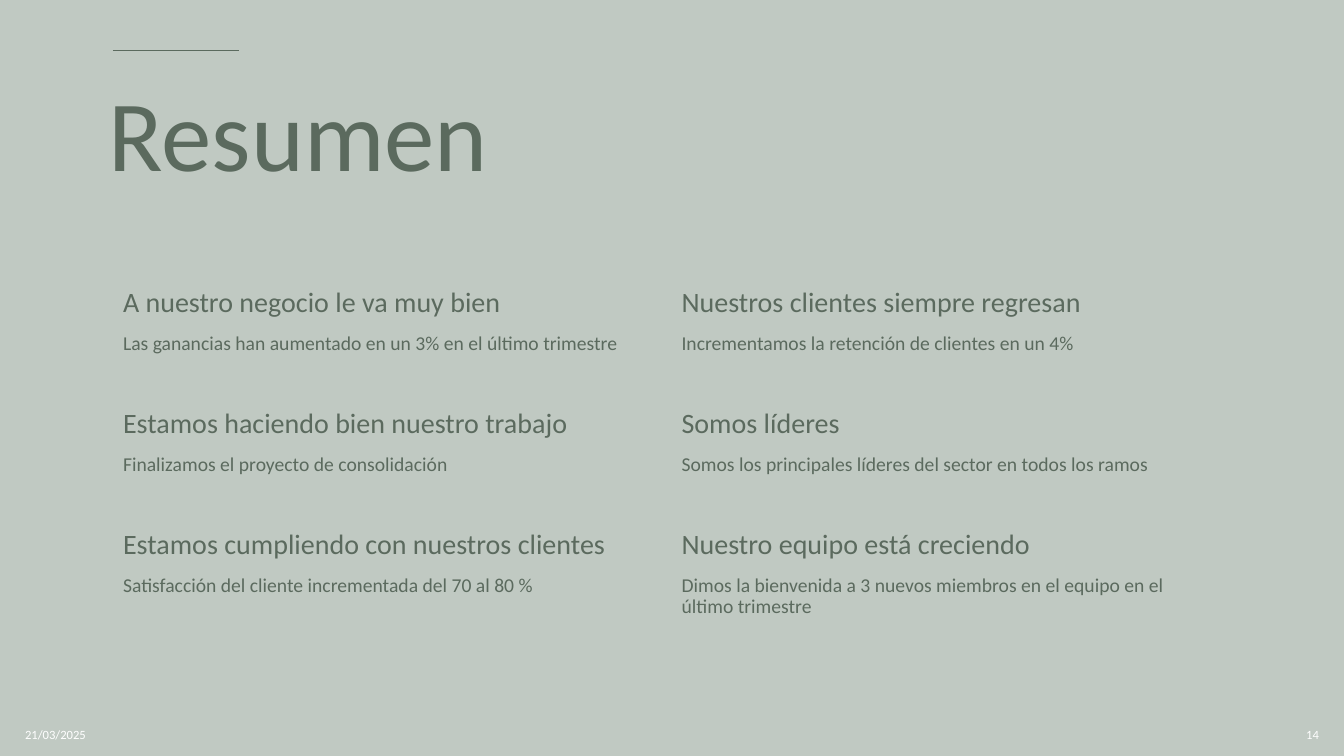
from pptx import Presentation
from pptx.dml.color import RGBColor
from pptx.enum.shapes import MSO_CONNECTOR
from pptx.enum.text import MSO_ANCHOR, PP_ALIGN
from pptx.oxml.ns import qn
from pptx.util import Inches, Pt
from lxml.etree import SubElement

SAGE = RGBColor(0xC0, 0xC9, 0xC2)
FOREST = RGBColor(0x5B, 0x6A, 0x5E)
WHITE = RGBColor(0xFF, 0xFF, 0xFF)
FONT = "Calibri"
NO_STYLE_NO_GRID = "{2D5ABB26-0587-4C30-8999-92F81FD0307C}"

SLIDE_WIDTH, SLIDE_HEIGHT = 13.33, 7.5
MARGIN = 1.12
COLUMN, ROW = 5.54, 1.2
SUMMARY_TOP = 2.81
FOOTER_TOP, FOOTER_WIDTH, FOOTER_HEIGHT, FOOTER_INSET = 7.09, 3, 0.4, 0.15

ACHIEVEMENTS = [
    [
        ("A nuestro negocio le va muy bien",
         "Las ganancias han aumentado en un 3% en el último trimestre"),
        ("Nuestros clientes siempre regresan",
         "Incrementamos la retención de clientes en un 4%"),
    ],
    [
        ("Estamos haciendo bien nuestro trabajo",
         "Finalizamos el proyecto de consolidación"),
        ("Somos líderes",
         "Somos los principales líderes del sector en todos los ramos"),
    ],
    [
        ("Estamos cumpliendo con nuestros clientes",
         "Satisfacción del cliente incrementada del 70 al 80 %"),
        ("Nuestro equipo está creciendo",
         "Dimos la bienvenida a 3 nuevos miembros en el equipo en el último trimestre"),
    ],
]


def style_paragraph(paragraph, size, color, line_spacing=1.0, space_before=0):
    paragraph.line_spacing = line_spacing
    paragraph.space_before = Pt(space_before)
    for run in paragraph.runs:
        run.font.name = FONT
        run.font.size = Pt(size)
        run.font.color.rgb = color


def add_label(slide, wording, box, size, color, align=PP_ALIGN.LEFT, line_spacing=1.0):
    label = slide.shapes.add_textbox(*map(Inches, box))
    frame = label.text_frame
    frame.word_wrap = True
    frame.vertical_anchor = MSO_ANCHOR.MIDDLE
    frame.text = wording
    frame.paragraphs[0].alignment = align
    style_paragraph(frame.paragraphs[0], size, color, line_spacing)


def add_accent_rule(slide, left, top, length):
    accent = slide.shapes.add_connector(
        MSO_CONNECTOR.STRAIGHT,
        Inches(left), Inches(top), Inches(left + length), Inches(top))
    accent.line.color.rgb = FOREST
    accent.line.width = Pt(1.25)
    SubElement(accent.element.spPr, qn("a:effectLst"))


def fill_achievement(cell, headline, detail):
    cell.fill.background()
    frame = cell.text_frame
    frame.text = headline
    frame.add_paragraph().text = detail
    for paragraph, size in zip(frame.paragraphs, (20, 14)):
        style_paragraph(paragraph, size, FOREST, line_spacing=0.9, space_before=10)


def add_summary_table(slide):
    row_count, column_count = len(ACHIEVEMENTS), len(ACHIEVEMENTS[0])
    holder = slide.shapes.add_table(
        row_count, column_count, Inches(MARGIN), Inches(SUMMARY_TOP),
        Inches(COLUMN * column_count), Inches(ROW * row_count))
    summary = holder.table
    summary.first_row = False
    summary.horz_banding = False
    next(holder.element.iter(qn("a:tableStyleId"))).text = NO_STYLE_NO_GRID
    for row_index, achievements in enumerate(ACHIEVEMENTS):
        for column_index, achievement in enumerate(achievements):
            fill_achievement(summary.cell(row_index, column_index), *achievement)


def add_footer(slide, wording, left, align):
    add_label(slide, wording, (left, FOOTER_TOP, FOOTER_WIDTH, FOOTER_HEIGHT),
              9, WHITE, align)


def main():
    deck = Presentation()
    deck.slide_width, deck.slide_height = Inches(SLIDE_WIDTH), Inches(SLIDE_HEIGHT)
    slide = deck.slides.add_slide(deck.slide_layouts[6])
    slide.background.fill.solid()
    slide.background.fill.fore_color.rgb = SAGE

    add_accent_rule(slide, MARGIN, 0.5, 1.25)
    add_label(slide, "Resumen", (0.98, 0.63, 11.11, 1.5), 72, FOREST, line_spacing=0.9)
    add_summary_table(slide)
    add_footer(slide, "21/03/2025", FOOTER_INSET, PP_ALIGN.LEFT)
    add_footer(slide, "14", SLIDE_WIDTH - FOOTER_WIDTH - FOOTER_INSET, PP_ALIGN.RIGHT)
    deck.save("out.pptx")


if __name__ == "__main__":
    main()
